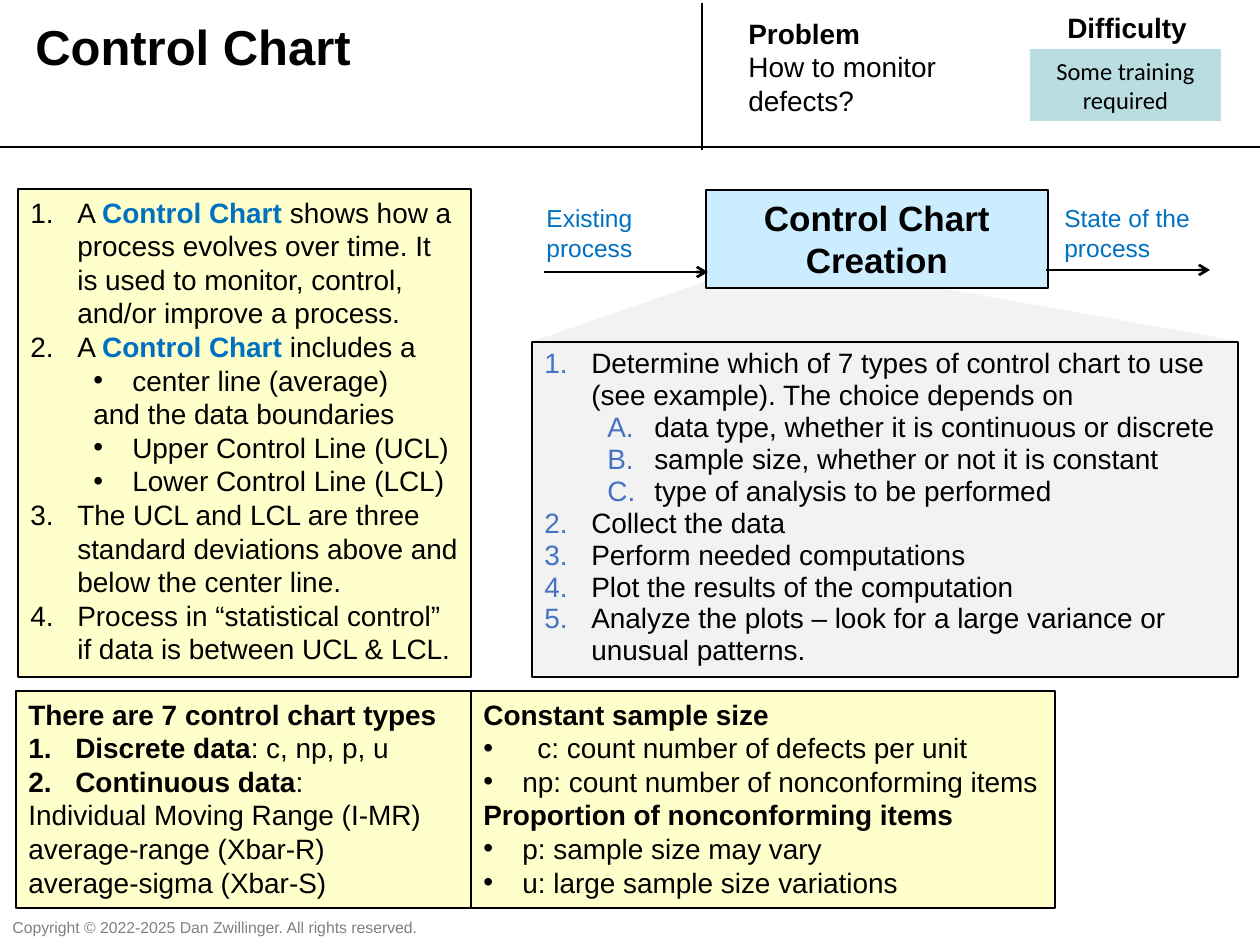
from lxml.etree import SubElement
from pptx import Presentation
from pptx.dml.color import RGBColor
from pptx.enum.shapes import MSO_CONNECTOR, MSO_SHAPE
from pptx.enum.text import MSO_ANCHOR, MSO_AUTO_SIZE, PP_ALIGN
from pptx.oxml.ns import qn
from pptx.util import Emu, Pt

COLORS = {"black": "000000", "blue": "0070C0", "gray": "808080", "mark": "4472C4",
          "pale": "F2F2F2", "cream": "FFFFCC", "sky": "CCECFF", "teal": "BADDE1"}

# kind: level, left margin, first-line indent, bullet tag, bullet attributes
LISTS = {
    "plain": (0, 0, 0, None, {}),
    "num": (0, 47, -47, "a:buAutoNum", {"type": "arabicPeriod"}),
    "alpha": (1, 110, -47, "a:buAutoNum", {"type": "alphaUcPeriod"}),
    "dot": (0, 39, -39, "a:buChar", {"char": "•"}),
    "deep": (0, 54, -54, "a:buChar", {"char": "•"}),
    "sub": (1, 102, -39, "a:buChar", {"char": "•"}),
    "inset": (1, 63, 0, None, {}),
}

ABOUT = [
    ("num", "A *Control Chart* shows how a process evolves over time. It is used to "
            "monitor, control, and/or improve a process."),
    ("num", "A *Control Chart* includes a"),
    ("sub", "center line (average)"),
    ("inset", "and the data boundaries"),
    ("sub", "Upper Control Line (UCL)"),
    ("sub", "Lower Control Line (LCL)"),
    ("num", "The UCL and LCL are three standard deviations above and below the center line."),
    ("num", "Process in “statistical control” if data is between UCL & LCL."),
]
STEPS = [
    ("num", "Determine which of 7 types of control chart to use (see example). "
            "The choice depends on"),
    ("alpha", "data type, whether it is continuous or discrete"),
    ("alpha", "sample size, whether or not it is constant"),
    ("alpha", "type of analysis to be performed"),
    ("num", "Collect the data"),
    ("num", "Perform needed computations"),
    ("num", "Plot the results of the computation"),
    ("num", "Analyze the plots – look for a large variance or unusual patterns."),
]
TYPES = [
    ("plain", "*There are 7 control chart types*"),
    ("num", "*Discrete data*: c, np, p, u"),
    ("num", "*Continuous data*:"),
    ("plain", "Individual Moving Range (I-MR) average-range (Xbar-R)"),
    ("plain", "average-sigma (Xbar-S)"),
]
SIZES = [
    ("plain", "*Constant sample size*"),
    ("deep", "c: count number of defects per unit"),
    ("dot", "np: count number of nonconforming items"),
    ("plain", "*Proportion of nonconforming items*"),
    ("dot", "p: sample size may vary"),
    ("dot", "u: large sample size variations"),
]


def px(count):
    return Emu(round(count * 914400 / 126))


def rgb(name):
    return RGBColor.from_string(COLORS[name])


def add_list(para, kind, mark):
    level, left, first, tag, attrs = LISTS[kind]
    para.level = level
    props = para._p.get_or_add_pPr()
    props.set("marL", str(px(left)))
    props.set("indent", str(px(first)))
    if not tag:
        SubElement(props, qn("a:buNone"))
        return
    if mark:
        color = SubElement(props, qn("a:buClr"))
        SubElement(color, qn("a:srgbClr"), val=COLORS[mark])
    SubElement(props, qn("a:buFont"), typeface="Arial")
    SubElement(props, qn(tag), attrs)


def add_runs(para, text, size, face, color, accent):
    for pos, part in enumerate(text.split("*")):
        if not part:
            continue
        run = para.add_run()
        run.text = part
        bold = pos % 2 == 1
        values = {"size": Pt(size), "name": face, "bold": bold}
        for name, value in values.items():
            setattr(run.font, name, value)
        run.font.color.rgb = rgb(accent if bold else color)


def fill_text(shape, lines, size=16, face="Arial", color="black", accent="black",
              center=False, wrap=True, space=None, mark=None):
    frame = shape.text_frame
    values = {"word_wrap": wrap, "auto_size": MSO_AUTO_SIZE.SHAPE_TO_FIT_TEXT,
              "vertical_anchor": MSO_ANCHOR.MIDDLE if center else MSO_ANCHOR.TOP}
    for name, value in values.items():
        setattr(frame, name, value)
    for pos, (kind, text) in enumerate(lines):
        para = frame.add_paragraph() if pos else frame.paragraphs[0]
        add_list(para, kind, mark)
        para.alignment = PP_ALIGN.CENTER if center else PP_ALIGN.LEFT
        if space:
            para.line_spacing = space
        add_runs(para, text, size, face, color, accent)


def add_label(slide, box, *texts, **style):
    shape = slide.shapes.add_textbox(*map(px, box))
    fill_text(shape, [("plain", text) for text in texts], **style)


def add_block(slide, box, fill, line=None, form=MSO_SHAPE.RECTANGLE):
    shape = slide.shapes.add_shape(form, *map(px, box))
    shape.shadow.inherit = False
    shape.fill.solid()
    shape.fill.fore_color.rgb = rgb(fill)
    if line:
        shape.line.color.rgb = rgb("black")
        shape.line.width = Pt(line)
    else:
        shape.line.fill.background()
    return shape


def add_line(slide, ends, width=0.75, arrow=False):
    line = slide.shapes.add_connector(MSO_CONNECTOR.STRAIGHT, *map(px, ends))
    line.line.color.rgb = rgb("black")
    line.line.width = Pt(width)
    if arrow:
        SubElement(line.line._get_or_add_ln(), qn("a:tailEnd"), type="arrow")
    SubElement(line._element.spPr, qn("a:effectLst"))


def add_header(slide):
    add_label(slide, (23, 10, 607, 72), "*Control Chart*", size=28)
    add_label(slide, (736, 10, 223, 115), "*Problem*", "How to monitor defects?")
    add_line(slide, (0, 147, 1260, 147))
    add_line(slide, (702, 150, 702, 3))
    add_label(slide, (1055, 4, 145, 47), "*Difficulty*", wrap=False)
    badge = add_block(slide, (1030, 49, 191, 72), "teal")
    fill_text(badge, [("plain", "Some training required")],
              size=14, face="Calibri", center=True)


def add_flow(slide):
    cone = add_block(slide, (534, 258, 703, 83), "pale", form=MSO_SHAPE.ISOSCELES_TRIANGLE)
    cone.adjustments[0] = 0.34
    steps = add_block(slide, (532, 342, 706, 335), "pale", 1)
    fill_text(steps, STEPS, space=0.95, mark="mark")
    core = add_block(slide, (706, 190, 342, 98), "sky", 0.75)
    fill_text(core, [("plain", "*Control Chart*"), ("plain", "*Creation*")],
              size=20, center=True)
    add_line(slide, (544, 272, 708, 272), 1.5, True)
    add_line(slide, (1046, 270, 1210, 270), 1.5, True)
    add_label(slide, (534, 197, 180, 72), "Existing process", size=14, color="blue")
    add_label(slide, (1052, 197, 164, 72), "State of the process", size=14, color="blue")


def add_notes(slide):
    about = add_block(slide, (18, 189, 453, 488), "cream", 0.75)
    fill_text(about, ABOUT, accent="blue")
    for left, width, lines in ((16, 455, TYPES), (471, 584, SIZES)):
        block = add_block(slide, (left, 691, width, 217), "cream", 0.75)
        fill_text(block, lines)
    add_label(slide, (0, 912, 436, 32),
              "Copyright © 2022-2025 Dan Zwillinger. All rights reserved.",
              size=9, color="gray", wrap=False)


def main():
    deck = Presentation()
    deck.slide_width, deck.slide_height = px(1260), px(945)
    slide = deck.slides.add_slide(deck.slide_layouts[6])
    add_header(slide)
    add_flow(slide)
    add_notes(slide)
    deck.save("out.pptx")


if __name__ == "__main__":
    main()
